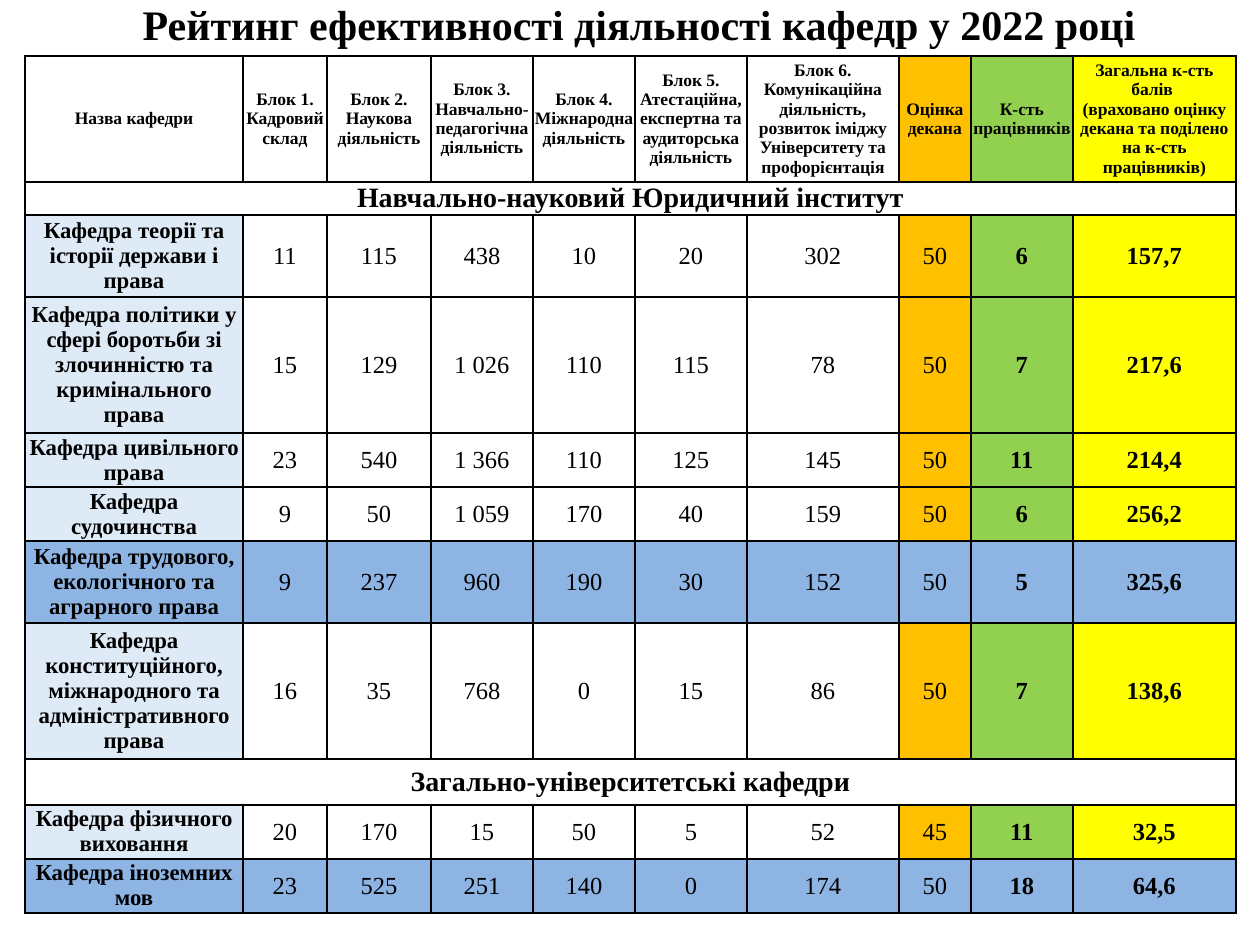
from dataclasses import dataclass
from typing import NamedTuple, Optional

from lxml.etree import SubElement
from pptx import Presentation
from pptx.dml.color import RGBColor
from pptx.enum.text import MSO_ANCHOR, MSO_AUTO_SIZE, PP_ALIGN
from pptx.oxml.ns import qn
from pptx.util import Emu, Pt

EMU_PER_PX = 914400 / 126


@dataclass(frozen=True)
class Theme:
    font: str = "Times New Roman"
    ink: str = "000000"
    white: str = "FFFFFF"
    name: str = "DEEAF6"
    leader: str = "8EB4E3"
    dean: str = "FFC000"
    staff: str = "92D050"
    total: str = "FFFF00"
    title_size: int = 24
    header_size: int = 10
    section_size: int = 16
    name_size: int = 13
    value_size: int = 14
    border_width: int = 1


class Column(NamedTuple):
    heading: str
    width: int
    fill: Optional[str] = None
    bold: bool = False


class Section(NamedTuple):
    height: int
    title: str
    fill: Optional[str] = None


class Department(NamedTuple):
    height: int
    name: str
    values: tuple
    leader: bool = False


THEME = Theme()
HEADER_HEIGHT = 126

COLUMNS = [
    Column("Назва кафедри", 218),
    Column("Блок 1. Кадровий склад", 84),
    Column("Блок 2. Наукова діяльність", 104),
    Column("Блок 3. Навчально-педагогічна діяльність", 102),
    Column("Блок 4. Міжнародна діяльність", 102),
    Column("Блок 5. Атестаційна, експертна та аудиторська діяльність", 112),
    Column("Блок 6. Комунікаційна діяльність, розвиток іміджу Університету та профорієнтація", 152),
    Column("Оцінка декана", 72, THEME.dean),
    Column("К-сть працівників", 102, THEME.staff, True),
    Column("Загальна к-сть балів \n(враховано оцінку декана та поділено на к-сть працівників)",
           163, THEME.total, True),
]

ROWS = [
    Section(33, "Навчально-науковий Юридичний інститут"),
    Department(82, "Кафедра теорії та історії держави і права",
               ("11", "115", "438", "10", "20", "302", "50", "6", "157,7")),
    Department(136, "Кафедра політики у сфері боротьби зі злочинністю та кримінального права",
               ("15", "129", "1 026", "110", "115", "78", "50", "7", "217,6")),
    Department(54, "Кафедра цивільного права",
               ("23", "540", "1 366", "110", "125", "145", "50", "11", "214,4")),
    Department(54, "Кафедра судочинства",
               ("9", "50", "1 059", "170", "40", "159", "50", "6", "256,2")),
    Department(82, "Кафедра трудового, екологічного та аграрного права",
               ("9", "237", "960", "190", "30", "152", "50", "5", "325,6"), leader=True),
    Department(136, "Кафедра конституційного, міжнародного та адміністративного права",
               ("16", "35", "768", "0", "15", "86", "50", "7", "138,6")),
    Section(46, "Загально-університетські кафедри", THEME.white),
    Department(54, "Кафедра фізичного виховання",
               ("20", "170", "15", "50", "5", "52", "45", "11", "32,5")),
    Department(54, "Кафедра іноземних мов",
               ("23", "525", "251", "140", "0", "174", "50", "18", "64,6"), leader=True),
]


def px(length: float) -> Emu:
    return Emu(round(length * EMU_PER_PX))


def write(frame, text: str, *, size: int, bold: bool = True) -> None:
    para = frame.paragraphs[0]
    para.alignment = PP_ALIGN.CENTER
    for index, line in enumerate(text.split("\n")):
        if index:
            para.add_line_break()
        span = para.add_run()
        span.text = line
        span.font.name = THEME.font
        span.font.size = Pt(size)
        span.font.bold = bold
        span.font.color.rgb = RGBColor.from_string(THEME.ink)


def style_cell(cell, fill: Optional[str] = None) -> None:
    cell.margin_left = cell.margin_right = px(1)
    cell.margin_top = cell.margin_bottom = 0
    cell.vertical_anchor = MSO_ANCHOR.MIDDLE
    properties = cell._tc.get_or_add_tcPr()
    for side in ("a:lnL", "a:lnR", "a:lnT", "a:lnB"):
        line = SubElement(properties, qn(side), w=str(Pt(THEME.border_width)))
        SubElement(SubElement(line, qn("a:solidFill")), qn("a:srgbClr"), val=THEME.ink)
    if fill:
        cell.fill.solid()
        cell.fill.fore_color.rgb = RGBColor.from_string(fill)
    else:
        cell.fill.background()


def fill_section(cells: list, section: Section) -> None:
    for cell in cells:
        style_cell(cell, section.fill)
    cells[0].merge(cells[-1])
    write(cells[0].text_frame, section.title, size=THEME.section_size)


def fill_department(cells: list, department: Department) -> None:
    style_cell(cells[0], THEME.leader if department.leader else THEME.name)
    write(cells[0].text_frame, department.name, size=THEME.name_size)
    for cell, column, value in zip(cells[1:], COLUMNS[1:], department.values):
        style_cell(cell, THEME.leader if department.leader else column.fill)
        write(cell.text_frame, value, size=THEME.value_size, bold=column.bold)


def add_rating_table(page, left: int, top: int) -> None:
    heights = [HEADER_HEIGHT] + [row.height for row in ROWS]
    width = sum(column.width for column in COLUMNS)
    table = page.shapes.add_table(len(heights), len(COLUMNS), px(left), px(top),
                                  px(width), px(sum(heights))).table
    table.first_row = table.horz_banding = False
    for table_column, column in zip(table.columns, COLUMNS):
        table_column.width = px(column.width)
    for table_row, height in zip(table.rows, heights):
        table_row.height = px(height)
    for cell, column in zip(table.rows[0].cells, COLUMNS):
        style_cell(cell, column.fill)
        write(cell.text_frame, column.heading, size=THEME.header_size)
    for index, row in enumerate(ROWS, start=1):
        cells = list(table.rows[index].cells)
        if isinstance(row, Section):
            fill_section(cells, row)
        else:
            fill_department(cells, row)


def add_title(page, text: str) -> None:
    title = page.shapes.title
    title.left, title.top, title.width, title.height = px(83), px(-8), px(1112), px(63)
    frame = title.text_frame
    frame.word_wrap = True
    frame.auto_size = MSO_AUTO_SIZE.NONE
    frame.vertical_anchor = MSO_ANCHOR.TOP
    write(frame, text, size=THEME.title_size)


def main() -> None:
    deck = Presentation()
    deck.slide_width, deck.slide_height = px(1260), px(945)
    page = deck.slides.add_slide(deck.slide_layouts[5])
    add_title(page, "Рейтинг ефективності діяльності кафедр у 2022 році")
    add_rating_table(page, 25, 56)
    deck.save("out.pptx")


if __name__ == "__main__":
    main()
